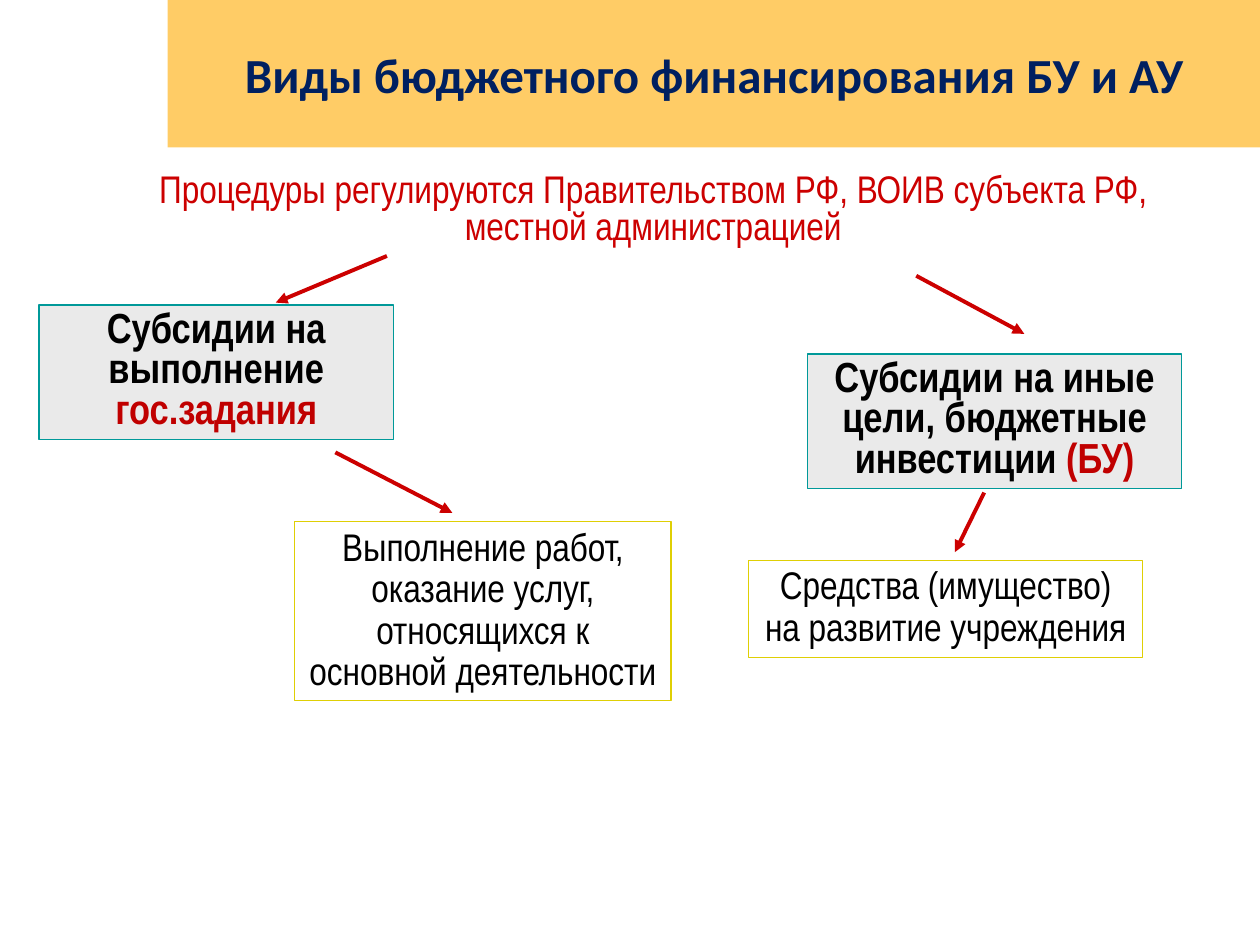
from lxml.etree import SubElement
from pptx import Presentation
from pptx.dml.color import RGBColor
from pptx.enum.shapes import MSO_CONNECTOR, MSO_SHAPE
from pptx.enum.text import MSO_ANCHOR, MSO_AUTO_SIZE, PP_ALIGN
from pptx.oxml.ns import qn
from pptx.util import Cm, Pt

RED, DARK_RED, BLACK = "CC0000", "C00000", "000000"
NARROW = "Arial Narrow"

TITLE = "Виды бюджетного финансирования БУ и АУ"
TITLE_PLACE = (3.38, 0, 22.02, 2.97)
TITLE_FONT = {"name": "Calibri", "size": Pt(28), "bold": True}

RULES = "Процедуры регулируются Правительством РФ, ВОИВ субъекта РФ, местной администрацией"
RULES_PLACE = (1.78, 3.38, 22.78, 1.75)

SUBSIDY = {"fill": "EAEAEA", "line": "009999", "spacing": 0.8,
           "font": {"name": NARROW, "size": Pt(24), "bold": True}}
PURPOSE = {"fill": None, "line": "DFCF04", "spacing": 0.9,
           "font": {"name": NARROW, "size": Pt(22), "bold": False}}

# place (left, top, width, height), style, runs of (text, colour)
BOXES = [
    ((0.79, 6.15, 7.14, 2.71), SUBSIDY,
     [("Субсидии на выполнение ", BLACK), ("гос.задания", DARK_RED)]),
    ((16.28, 7.14, 7.54, 2.71), SUBSIDY,
     [("Субсидии на иные цели, бюджетные инвестиции ", BLACK), ("(БУ)", DARK_RED)]),
    ((5.94, 10.52, 7.59, 3.61), PURPOSE,
     [("Выполнение работ, оказание услуг, относящихся к основной деятельности", BLACK)]),
    ((15.09, 11.3, 7.95, 1.96), PURPOSE,
     [("Средства (имущество) на развитие учреждения", BLACK)]),
]

# tail x, tail y, tip x, tip y
ARROWS = [
    (7.8, 5.16, 5.56, 6.1),
    (18.47, 5.56, 20.65, 6.73),
    (6.76, 9.12, 9.12, 10.34),
    (19.84, 9.93, 19.25, 11.13),
]


def color(hex_value):
    return RGBColor.from_string(hex_value)


def lengths(values):
    return [Cm(value) for value in values]


def write(shape, runs, font, spacing=1.0, anchor=MSO_ANCHOR.TOP):
    frame = shape.text_frame
    frame.word_wrap = True
    frame.auto_size = MSO_AUTO_SIZE.NONE
    frame.vertical_anchor = anchor
    para = frame.paragraphs[0]
    para.alignment = PP_ALIGN.CENTER
    para.line_spacing = spacing
    for text, text_color in runs:
        span = para.add_run()
        span.text = text
        for name, value in font.items():
            setattr(span.font, name, value)
        span.font.color.rgb = color(text_color)


def add_box(slide, place, style, runs):
    box = slide.shapes.add_shape(MSO_SHAPE.RECTANGLE, *lengths(place))
    box.shadow.inherit = False
    if style["fill"]:
        box.fill.solid()
        box.fill.fore_color.rgb = color(style["fill"])
    else:
        box.fill.background()
    box.line.color.rgb = color(style["line"])
    box.line.width = Pt(0.75)
    write(box, runs, style["font"], style["spacing"])


def add_arrow(slide, ends):
    arrow = slide.shapes.add_connector(MSO_CONNECTOR.STRAIGHT, *lengths(ends))
    arrow.line.color.rgb = color(RED)
    arrow.line.width = Pt(2.25)
    SubElement(arrow.line._get_or_add_ln(), qn("a:tailEnd"), type="triangle")
    SubElement(arrow._element.spPr, qn("a:effectLst"))


def add_title(slide):
    title = slide.shapes.title
    title.left, title.top, title.width, title.height = lengths(TITLE_PLACE)
    title.fill.solid()
    title.fill.fore_color.rgb = color("FFCC66")
    write(title, [(TITLE, "002060")], TITLE_FONT, anchor=MSO_ANCHOR.MIDDLE)


def main():
    deck = Presentation()
    deck.slide_width, deck.slide_height = Cm(25.4), Cm(19.05)
    slide = deck.slides.add_slide(deck.slide_layouts[5])
    add_title(slide)
    for place, style, runs in BOXES:
        add_box(slide, place, style, runs)
    rules = slide.shapes.add_textbox(*lengths(RULES_PLACE))
    write(rules, [(RULES, RED)], PURPOSE["font"], 0.8)
    for ends in ARROWS:
        add_arrow(slide, ends)
    deck.save("out.pptx")


if __name__ == "__main__":
    main()
